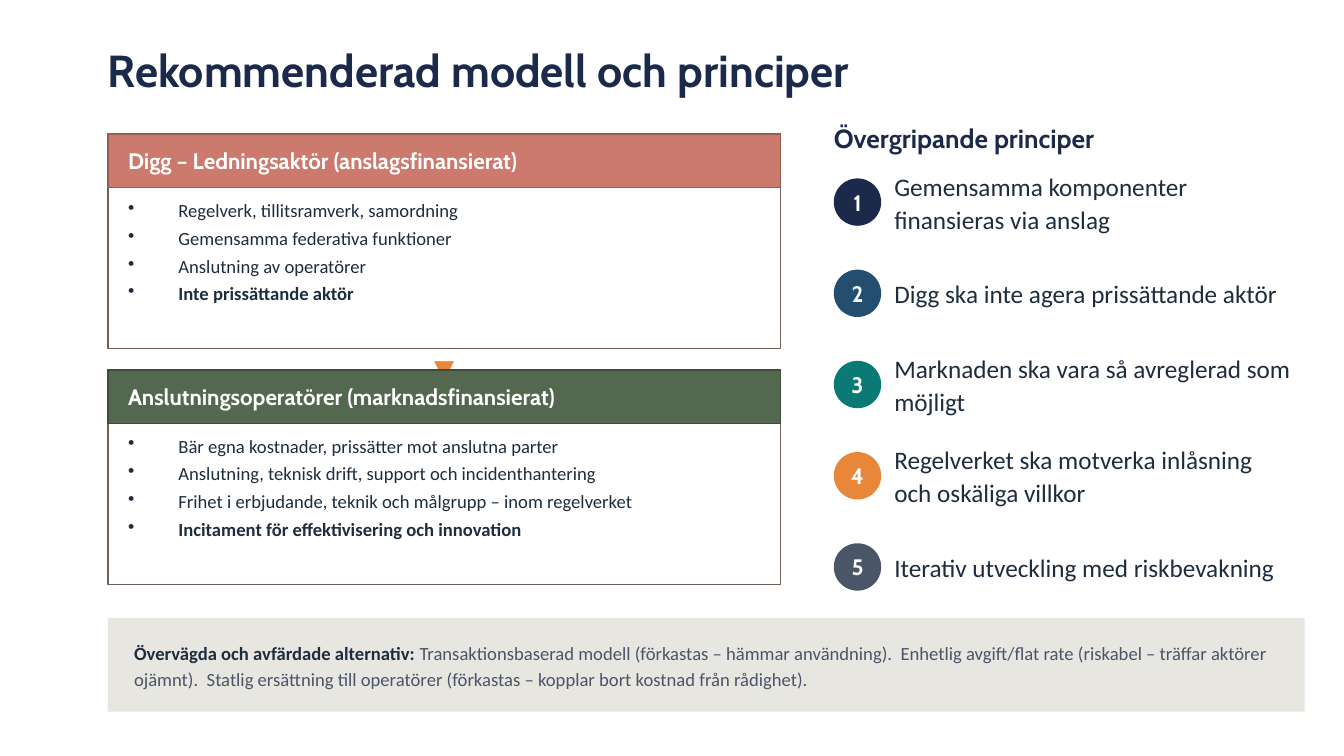
"""Build the slide on the recommended model and its principles."""
from typing import NamedTuple

import lxml.etree
import pptx
import pptx.dml.color
import pptx.enum.shapes
import pptx.enum.text
import pptx.oxml.ns
import pptx.presentation
import pptx.shapes.autoshape
import pptx.slide
import pptx.text.text
import pptx.util

Inches = pptx.util.Inches
SHAPE = pptx.enum.shapes.MSO_SHAPE
ALIGN = pptx.enum.text.PP_ALIGN
ANCHOR = pptx.enum.text.MSO_ANCHOR

NAVY, INK, SLATE, ORANGE, WHITE = "1B2A4A", "1E2D3D", "4A5568", "E8873A", "FFFFFF"
HEADING, BODY = "Cabin", "Calibri"
LEFT, MODEL_W = 1.07, 6.67
PRINCIPLE_X, PRINCIPLE_Y, PRINCIPLE_STEP, DOT = 8.27, 1.77, 0.905, 0.47


class Box(NamedTuple):
    x: float
    y: float
    w: float
    h: float


class Style(NamedTuple):
    size: float
    color: str
    font: str = BODY
    bold: bool = False


class Model(NamedTuple):
    y: float
    title: str
    fill: str
    line: str
    bullets: tuple[str, ...]


class Principle(NamedTuple):
    text: str
    color: str


MODELS = (
    Model(1.33, "Digg – Ledningsaktör (anslagsfinansierat)", "CD7A6E", "985A51", (
        "Regelverk, tillitsramverk, samordning",
        "Gemensamma federativa funktioner",
        "Anslutning av operatörer",
        "Inte prissättande aktör",
    )),
    Model(3.67, "Anslutningsoperatörer (marknadsfinansierat)", "546850", "3E4D3B", (
        "Bär egna kostnader, prissätter mot anslutna parter",
        "Anslutning, teknisk drift, support och incidenthantering",
        "Frihet i erbjudande, teknik och målgrupp – inom regelverket",
        "Incitament för effektivisering och innovation",
    )),
)

PRINCIPLES = (
    Principle("Gemensamma komponenter finansieras via anslag", NAVY),
    Principle("Digg ska inte agera prissättande aktör", "234E70"),
    Principle("Marknaden ska vara så avreglerad som möjligt", "0B7A75"),
    Principle("Regelverket ska motverka inlåsning och oskäliga villkor", ORANGE),
    Principle("Iterativ utveckling med riskbevakning", SLATE),
)


def rgb(color: str) -> pptx.dml.color.RGBColor:
    return pptx.dml.color.RGBColor.from_string(color)


def add_run(p: pptx.text.text._Paragraph, text: str, style: Style) -> None:
    r = p.add_run()
    r.text = text
    r.font.size = pptx.util.Pt(style.size)
    r.font.name = style.font
    r.font.bold = style.bold
    r.font.color.rgb = rgb(style.color)


def set_frame(tf: pptx.text.text.TextFrame, anchor: ANCHOR, inset: float = 0) -> None:
    tf.word_wrap = True
    tf.vertical_anchor = anchor
    tf.margin_left = tf.margin_right = Inches(inset)
    tf.margin_top = tf.margin_bottom = 0


def add_text(s: pptx.slide.Slide, box: Box, anchor: ANCHOR = ANCHOR.MIDDLE) -> pptx.text.text.TextFrame:
    tf = s.shapes.add_textbox(*map(Inches, box)).text_frame
    set_frame(tf, anchor)
    return tf


def add_block(s: pptx.slide.Slide, kind: SHAPE, box: Box, fill: str,
              line: str | None = None) -> pptx.shapes.autoshape.Shape:
    sp = s.shapes.add_shape(kind, *map(Inches, box))
    sp.shadow.inherit = False
    sp.fill.solid()
    sp.fill.fore_color.rgb = rgb(fill)
    if line:
        sp.line.color.rgb = rgb(line)
        sp.line.width = pptx.util.Pt(1)
    else:
        sp.line.fill.background()
    return sp


def add_label(sp: pptx.shapes.autoshape.Shape, text: str, align: ALIGN, inset: float = 0) -> None:
    set_frame(sp.text_frame, ANCHOR.MIDDLE, inset)
    p = sp.text_frame.paragraphs[0]
    p.alignment = align
    add_run(p, text, Style(16, WHITE, HEADING, True))


def add_bullets(tf: pptx.text.text.TextFrame, bullets: tuple[str, ...]) -> None:
    for i, text in enumerate(bullets):
        last = i == len(bullets) - 1
        p = tf.add_paragraph() if i else tf.paragraphs[0]
        pPr = p._p.get_or_add_pPr()
        pPr.set("marL", str(Inches(0.5)))
        pPr.set("indent", str(-Inches(0.5)))
        lxml.etree.SubElement(pPr, pptx.oxml.ns.qn("a:buChar")).set("char", "•")
        if not last:
            p.space_after = pptx.util.Pt(4)
        add_run(p, text, Style(13.3, INK, bold=last))


def add_model(s: pptx.slide.Slide, model: Model) -> None:
    add_block(s, SHAPE.RECTANGLE, Box(LEFT, model.y, MODEL_W, 2.13), WHITE, "6D6059")
    sp = add_block(s, SHAPE.RECTANGLE, Box(LEFT, model.y, MODEL_W, 0.53), model.fill, model.line)
    add_label(sp, model.title, ALIGN.LEFT, 0.2)
    tf = add_text(s, Box(LEFT + 0.2, model.y + 0.64, MODEL_W - 0.4, 1.4), ANCHOR.TOP)
    add_bullets(tf, model.bullets)


def add_principle(s: pptx.slide.Slide, i: int, principle: Principle) -> None:
    y = PRINCIPLE_Y + i * PRINCIPLE_STEP
    sp = add_block(s, SHAPE.OVAL, Box(PRINCIPLE_X, y, DOT, DOT), principle.color)
    add_label(sp, str(i + 1), ALIGN.CENTER)
    p = add_text(s, Box(PRINCIPLE_X + 0.6, y - 0.04, 3.93, 0.53)).paragraphs[0]
    p.line_spacing = 1.1
    add_run(p, principle.text, Style(18, INK))


def add_alternatives(s: pptx.slide.Slide) -> None:
    add_block(s, SHAPE.RECTANGLE, Box(LEFT, 6.13, 11.87, 0.93), "E8E6E1")
    p = add_text(s, Box(1.33, 6.16, 11.33, 0.87)).paragraphs[0]
    p.line_spacing = 1.15
    add_run(p, "Övervägda och avfärdade alternativ: ", Style(13.3, INK, bold=True))
    add_run(p, "Transaktionsbaserad modell (förkastas – hämmar användning).  "
               "Enhetlig avgift/flat rate (riskabel – träffar aktörer ojämnt).  "
               "Statlig ersättning till operatörer (förkastas – kopplar bort kostnad "
               "från rådighet).", Style(13.3, SLATE))


def main() -> None:
    prs = pptx.Presentation()
    prs.slide_width, prs.slide_height = Inches(13.33), Inches(7.5)
    s = prs.slides.add_slide(prs.slide_layouts[6])

    title = add_text(s, Box(LEFT, 0.33, 12, 0.73))
    add_run(title.paragraphs[0], "Rekommenderad modell och principer", Style(32, NAVY, HEADING, True))

    leading, operators = MODELS
    add_model(s, leading)
    p = add_text(s, Box(LEFT, 3.49, MODEL_W, 0.33)).paragraphs[0]
    p.alignment = ALIGN.CENTER
    add_run(p, "▼", Style(18.7, ORANGE))
    add_model(s, operators)

    heading = add_text(s, Box(PRINCIPLE_X, 1.17, 4.67, 0.4))
    add_run(heading.paragraphs[0], "Övergripande principer", Style(18.7, NAVY, HEADING, True))
    for i, principle in enumerate(PRINCIPLES):
        add_principle(s, i, principle)

    add_alternatives(s)
    prs.save("out.pptx")


if __name__ == "__main__":
    main()
